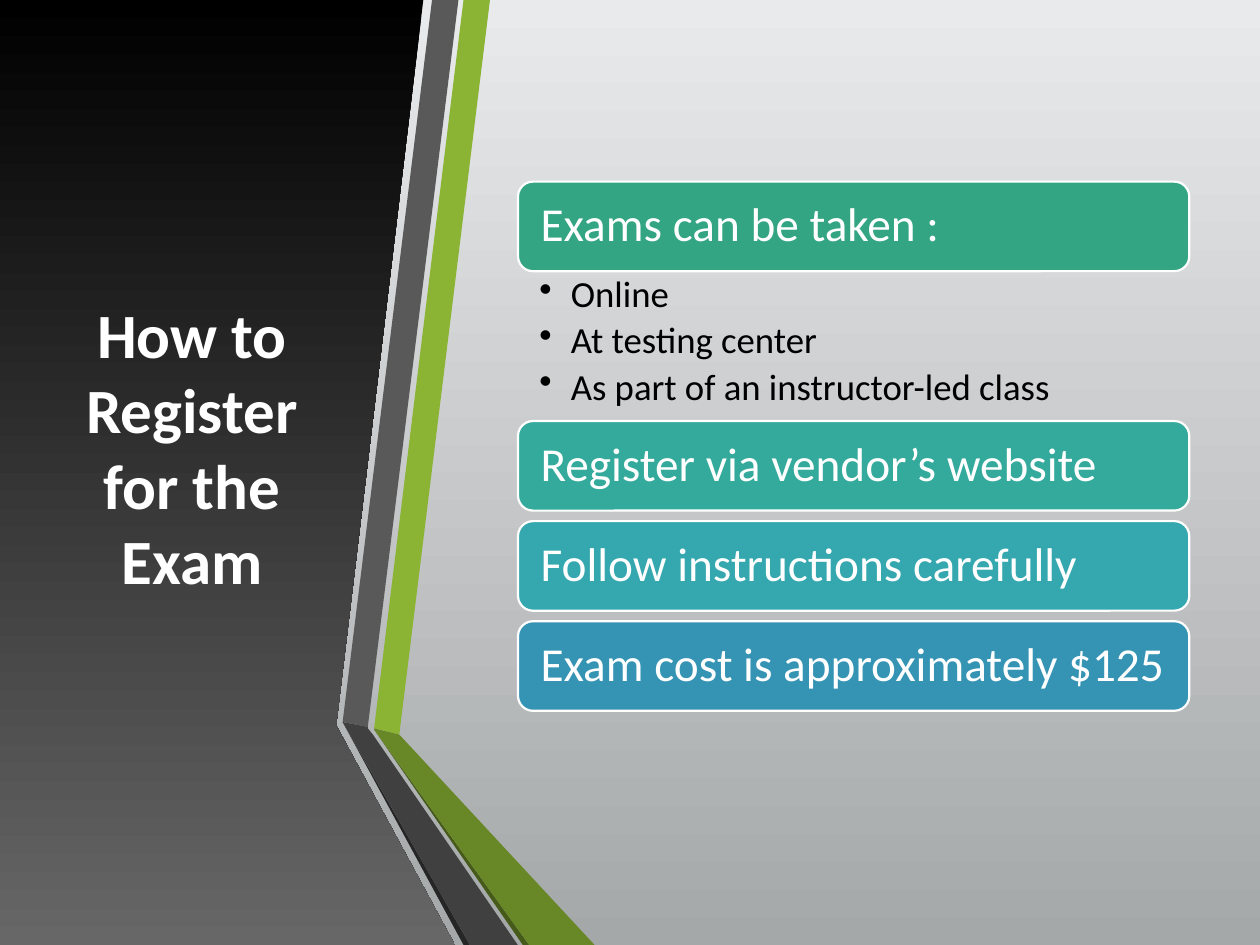
from dataclasses import dataclass

from lxml import etree
from pptx import Presentation
from pptx.dml.color import RGBColor
from pptx.enum.shapes import MSO_SHAPE
from pptx.enum.text import MSO_ANCHOR, PP_ALIGN
from pptx.oxml.ns import qn
from pptx.util import Pt

RECTANGLE = MSO_SHAPE.RECTANGLE
ROUNDED = MSO_SHAPE.ROUNDED_RECTANGLE
MIDDLE = MSO_ANCHOR.MIDDLE
TOP = MSO_ANCHOR.TOP
LEFT = PP_ALIGN.LEFT
CENTER = PP_ALIGN.CENTER


@dataclass(frozen=True)
class Theme:
    """Colours, font and type sizes of the slide."""
    font: str = "Calibri"
    title_size: float = 36
    bar_size: float = 27
    bullet_size: float = 21
    white: str = "FFFFFF"
    black: str = "000000"
    panel_end: str = "676767"
    backdrop: tuple = ("E9EAEB", "A5A8A9")
    lime: str = "8BB434"
    olive: str = "688727"
    olive_shade: str = "465A1A"
    gray: str = "595959"
    charcoal: str = "404040"
    charcoal_shade: str = "262626"


THEME = Theme()
WIDTH, HEIGHT = 720, 540

PANEL = [(190.1, 0), (241.9, 0), (192.2, 414), (192.2, 414.7),
         (259.9, 540), (0, 540), (0, 0)]
RIBBONS = [
    (THEME.lime, [(18, 416.2), (32.4, 419.8), (84.2, 0), (69.1, 0)]),
    (THEME.gray, [(66.2, 0), (51.1, 0), (0, 412.6), (14.4, 415.4)]),
    (THEME.charcoal_shade, [(0, 412.6), (69.1, 540), (72.7, 540)]),
    (THEME.olive_shade, [(18, 416.9), (103, 540), (106.6, 540)]),
    (THEME.olive, [(18, 416.9), (106.6, 540), (144, 540),
                   (32.4, 419.8), (18, 416.2)]),
    (THEME.charcoal, [(100.1, 540), (17.3, 419.8), (14.4, 416.2),
                      (14.4, 415.4), (0, 412.6), (72.7, 540)]),
]
TITLE = "How to Register for the Exam"
STEPS = [
    ("33A583", "Exams can be taken :",
     ["Online", "At testing center", "As part of an instructor-led class"]),
    ("34AA9C", "Register via vendor’s website", []),
    ("34A7AF", "Follow instructions carefully", []),
    ("3594B4", "Exam cost is approximately $125", []),
]


def fill_solid(shape, color):
    """Fill a shape with one colour."""
    shape.fill.solid()
    shape.fill.fore_color.rgb = RGBColor.from_string(color)


def fill_down(fill, colors):
    """Apply a gradient running from the top colour to the bottom one."""
    fill.gradient()
    fill.gradient_angle = 270
    for stop, color in zip(fill.gradient_stops, colors):
        stop.color.rgb = RGBColor.from_string(color)


def add_outline(page, points, left, top):
    """Draw a closed, borderless outline offset from the given corner."""
    corners = [(Pt(left + x), Pt(top + y)) for x, y in points]
    builder = page.shapes.build_freeform(*corners[0], scale=1.0)
    builder.add_line_segments(corners[1:], close=True)
    shape = builder.convert_to_shape()
    shape.shadow.inherit = False
    shape.line.fill.background()
    return shape


def set_frame(frame, anchor, insets):
    """Set wrapping, anchor and the left, top, right and bottom insets."""
    frame.word_wrap = True
    frame.vertical_anchor = anchor
    (frame.margin_left, frame.margin_top,
     frame.margin_right, frame.margin_bottom) = map(Pt, insets)


def style_para(para, text, size, color, align=LEFT, bold=False):
    """Write one paragraph in the theme font."""
    para.text = text
    para.alignment = align
    para.font.name = THEME.font
    para.font.size = Pt(size)
    para.font.bold = bold
    para.font.color.rgb = RGBColor.from_string(color)


def add_bullet(para, indent):
    """Give a paragraph a round bullet and a hanging indent."""
    properties = para._p.get_or_add_pPr()
    properties.set("marL", str(Pt(indent)))
    properties.set("indent", str(-Pt(indent)))
    etree.SubElement(properties, qn("a:buChar")).set("char", "•")


def add_backdrop(page, left, top, width, height):
    """Cover the box with the pale gradient."""
    fill_down(page.background.fill, THEME.backdrop)
    shape = page.shapes.add_shape(
        RECTANGLE, Pt(left), Pt(top), Pt(width), Pt(height))
    shape.shadow.inherit = False
    shape.line.fill.background()
    fill_down(shape.fill, THEME.backdrop)


def add_title_panel(page, left, top):
    """Draw the dark panel with the title on it."""
    panel = add_outline(page, PANEL, left, top)
    fill_down(panel.fill, (THEME.black, THEME.panel_end))
    box = page.shapes.add_textbox(
        Pt(left + 31.7), Pt(top + 54), Pt(156), Pt(402))
    set_frame(box.text_frame, MIDDLE, (7.2, 3.6, 7.2, 3.6))
    style_para(box.text_frame.paragraphs[0], TITLE, THEME.title_size,
               THEME.white, CENTER, True)


def add_ribbons(page, left, top):
    """Draw the folded ribbons along the panel edge."""
    for color, points in RIBBONS:
        fill_solid(add_outline(page, points, left, top), color)


def add_bar(page, text, color, left, top, width, height):
    """Draw one rounded bar with its label."""
    bar = page.shapes.add_shape(
        ROUNDED, Pt(left), Pt(top), Pt(width), Pt(height))
    bar.shadow.inherit = False
    fill_solid(bar, color)
    bar.line.color.rgb = RGBColor.from_string(THEME.white)
    bar.line.width = Pt(1.25)
    set_frame(bar.text_frame, MIDDLE, (10.4, 8, 8, 8))
    para = bar.text_frame.paragraphs[0]
    style_para(para, text, THEME.bar_size, THEME.white)
    para.line_spacing = 0.9


def add_bullets(page, items, left, top, width, height):
    """Write the bulleted details below a bar."""
    box = page.shapes.add_textbox(Pt(left), Pt(top), Pt(width), Pt(height))
    frame = box.text_frame
    set_frame(frame, TOP, (12.2, 2.7, 15, 2.7))
    for index, item in enumerate(items):
        para = frame.add_paragraph() if index else frame.paragraphs[0]
        add_bullet(para, 18)
        style_para(para, item, THEME.bullet_size, THEME.black)
        para.line_spacing = 0.9
        para.space_after = Pt(3.8)


def add_steps(page, left, top, width):
    """Stack the bars, leaving room for details or a small gap."""
    bar_height, details_height, gap = 51.2, 85.6, 6
    for color, text, items in STEPS:
        add_bar(page, text, color, left, top, width, bar_height)
        top += bar_height
        if items:
            add_bullets(page, items, left, top, width, details_height)
        top += details_height if items else gap


def main():
    """Build and save the slide."""
    deck = Presentation()
    deck.slide_width, deck.slide_height = Pt(WIDTH), Pt(HEIGHT)
    page = deck.slides.add_slide(deck.slide_layouts[6])
    add_backdrop(page, 0, 0, WIDTH, HEIGHT)
    add_title_panel(page, 0, 0)
    add_ribbons(page, 195.8, 0)
    add_steps(page, 296, 103.8, 383.6)
    deck.save("out.pptx")


if __name__ == "__main__":
    main()
